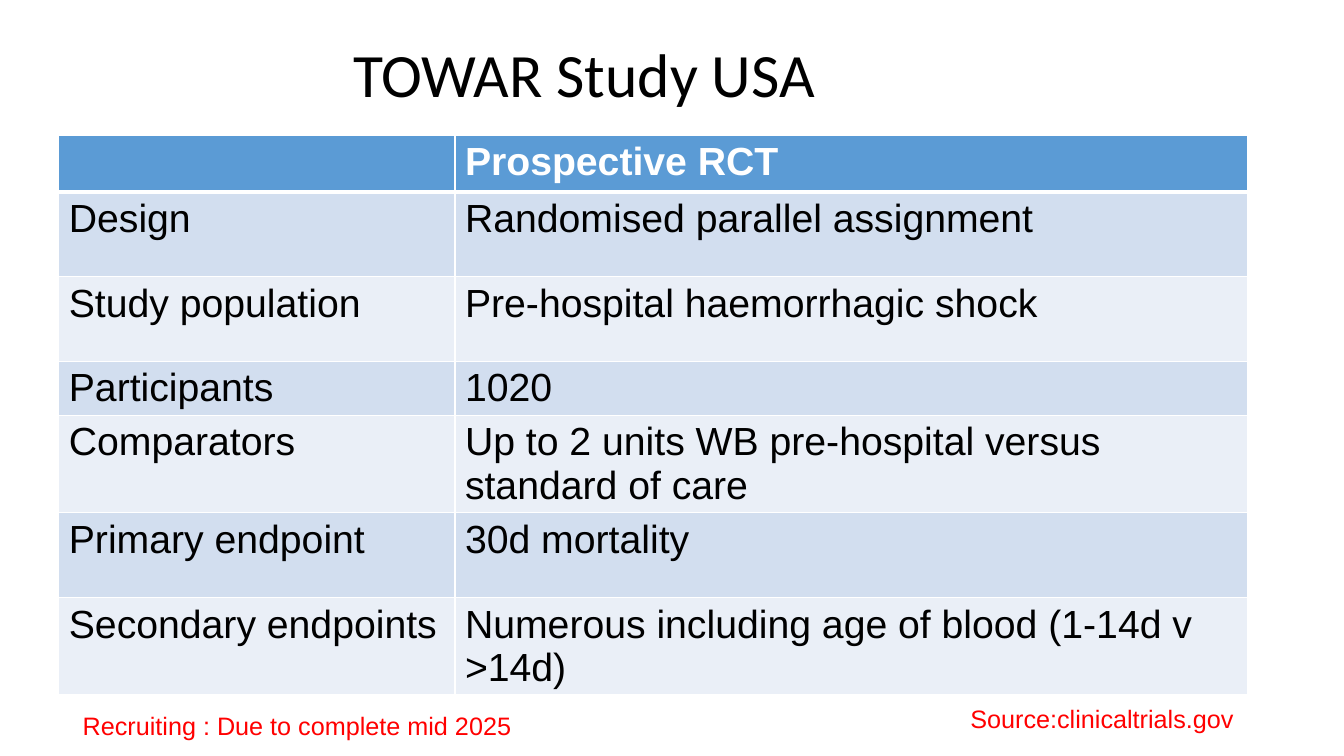
"""Build the TOWAR study summary slide."""
from lxml.etree import SubElement
from pptx import Presentation
from pptx.dml.color import RGBColor
from pptx.enum.text import MSO_ANCHOR, MSO_AUTO_SIZE, PP_ALIGN
from pptx.oxml.ns import qn
from pptx.util import Pt

TITLE = "TOWAR Study USA"
TITLE_BOX = (245, 15, 400, 81)
STUDY = [
    ("", "Prospective RCT", 40.5),
    ("Design", "Randomised parallel assignment", 60.5),
    ("Study population", "Pre-hospital haemorrhagic shock", 60.5),
    ("Participants", "1020", 38.5),
    ("Comparators", "Up to 2 units WB pre-hospital versus standard of care", 69.5),
    ("Primary endpoint", "30d mortality", 60.5),
    ("Secondary endpoints", "Numerous including age of blood (1-14d v >14d)", 69.5),
]
COLUMN_WIDTHS = (283, 566)
TABLE_LEFT, TABLE_TOP = 42, 96.75
HEADER_FILL, BAND_FILLS = "5B9BD5", ("D2DEEF", "EAEFF7")
FOOTNOTES = [
    ("Recruiting : Due to complete mid 2025", (52, 503.5, 352, 29)),
    ("Source:clinicaltrials.gov", (686, 498.5, 212.5, 29)),
]


def color(code):
    return RGBColor.from_string(code)


def format_text(frame, font_name, size, code, bold=False):
    for paragraph in frame.paragraphs:
        for run in paragraph.runs:
            run.font.name = font_name
            run.font.size = Pt(size)
            run.font.bold = bold
            run.font.color.rgb = color(code)


def add_borders(cell, bottom_width):
    properties = cell._tc.get_or_add_tcPr()
    for side, width in (("L", 1), ("R", 1), ("T", 1), ("B", bottom_width)):
        border = SubElement(properties, qn(f"a:ln{side}"), w=str(Pt(width)))
        fill = SubElement(border, qn("a:solidFill"))
        SubElement(fill, qn("a:srgbClr"), val="FFFFFF")


def add_title(slide):
    title = slide.shapes.title
    title.left, title.top, title.width, title.height = map(Pt, TITLE_BOX)
    frame = title.text_frame
    frame.text = TITLE
    frame.vertical_anchor = MSO_ANCHOR.MIDDLE
    frame.paragraphs[0].alignment = PP_ALIGN.LEFT
    frame.paragraphs[0].line_spacing = 0.9
    format_text(frame, "Calibri", 44, "000000")


def add_study_table(slide):
    height = sum(row_height for *_, row_height in STUDY)
    table = slide.shapes.add_table(
        len(STUDY), len(COLUMN_WIDTHS), Pt(TABLE_LEFT), Pt(TABLE_TOP),
        Pt(sum(COLUMN_WIDTHS)), Pt(height)).table
    for column, width in zip(table.columns, COLUMN_WIDTHS):
        column.width = Pt(width)
    for row, (*entries, row_height) in enumerate(STUDY):
        header = row == 0
        table.rows[row].height = Pt(row_height)
        for column, entry in enumerate(entries):
            cell = table.cell(row, column)
            add_borders(cell, 3 if header else 1)
            cell.fill.solid()
            cell.fill.fore_color.rgb = color(
                HEADER_FILL if header else BAND_FILLS[(row - 1) % 2])
            cell.text_frame.text = entry
            format_text(cell.text_frame, "Arial", 28,
                        "FFFFFF" if header else "000000", header)


def add_footnote(slide, note, box):
    frame = slide.shapes.add_textbox(*map(Pt, box)).text_frame
    frame.word_wrap = True
    frame.auto_size = MSO_AUTO_SIZE.SHAPE_TO_FIT_TEXT
    frame.text = note
    format_text(frame, "Arial", 18, "FF0000")


def main():
    presentation = Presentation()
    presentation.slide_width, presentation.slide_height = Pt(960), Pt(540)
    slide = presentation.slides.add_slide(presentation.slide_layouts[5])
    add_title(slide)
    add_study_table(slide)
    for note, box in FOOTNOTES:
        add_footnote(slide, note, box)
    presentation.save("out.pptx")


if __name__ == "__main__":
    main()
